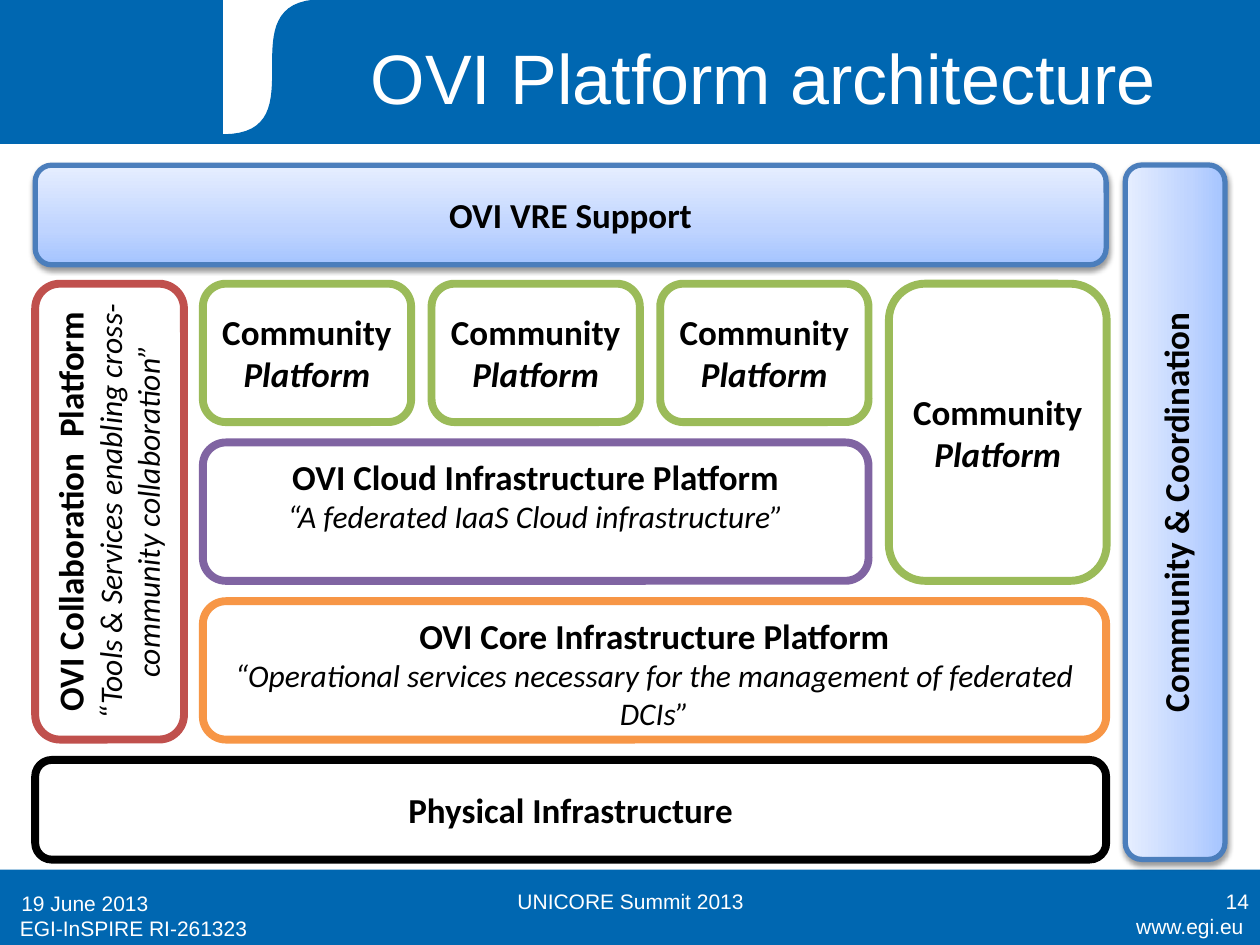
from pptx import Presentation
from pptx.dml.color import RGBColor
from pptx.enum.shapes import MSO_SHAPE as Shape
from pptx.enum.text import MSO_ANCHOR as Anchor, PP_ALIGN as Align
from pptx.oxml import parse_xml
from pptx.oxml.ns import nsdecls
from pptx.util import Cm, Pt

COLORS = {
    "blue": "0067B1", "white": "FFFFFF", "black": "000000",
    "orange": "F79646", "purple": "8064A2", "red": "C0504D",
    "green": "9BBB59", "steel": "4B7EBC",
    "deep": "A4C4FF", "mid": "BFD4FF", "pale": "E6EEFF",
}
PAGE_WIDTH, PAGE_HEIGHT = 25.4, 19.05
LEFT, FULL_WIDTH, BAR_HEIGHT = 0.71, 21.59, 2.01
GRID_LEFT, GRID_TOP = 4.09, 5.72
COL_STEP, ROW_STEP, GAP = 4.61, 3.2, 0.41
COMMUNITY = [("Community", 20, True, False), ("Platform", 20, True, True)]


def color(name):
    return RGBColor.from_string(COLORS[name])


def heading(text):
    return (text, 20, True, False)


def quote(text):
    return (text, 18, False, True)


def grid_area(col, row, cols, rows):
    return (GRID_LEFT + col * COL_STEP, GRID_TOP + row * ROW_STEP,
            cols * COL_STEP - GAP, rows * ROW_STEP - GAP)


def paint(shape, fill, line, width):
    shape.shadow.inherit = False
    shape.fill.solid()
    shape.fill.fore_color.rgb = color(fill)
    shape.line.color.rgb = color(line)
    shape.line.width = Pt(width)


def add_block(page, area, fill, line, width=0.75, kind=Shape.RECTANGLE):
    block = page.shapes.add_shape(kind, *map(Cm, area))
    paint(block, fill, line, width)
    return block


def add_curve(page, left, right, bottom, bend):
    points = []
    for step in range(1, 33):
        t = step / 32
        x = (left * ((1 - t) ** 3 + 3 * t ** 2 * (1 - t))
             + bend * (3 * t * (1 - t) ** 2 + t ** 3))
        y = bottom * ((1 - t) ** 3 + 3 * t * (1 - t) ** 2)
        points.append((Cm(x), Cm(y)))
    builder = page.shapes.build_freeform(Cm(right), 0)
    builder.add_line_segments(
        [(Cm(right), Cm(bottom)), (Cm(left), Cm(bottom))] + points)
    paint(builder.convert_to_shape(), "blue", "blue", 0.75)


def add_label(page, area, text, size=12, align=Align.LEFT, anchor=Anchor.MIDDLE):
    box = page.shapes.add_textbox(*map(Cm, area))
    frame = box.text_frame
    frame.word_wrap = True
    frame.vertical_anchor = anchor
    para = frame.paragraphs[0]
    para.text = text
    para.alignment = align
    para.font.name = "Arial"
    para.font.size = Pt(size)
    para.font.color.rgb = color("white")


def add_platform(page, area, line, lines, anchor=Anchor.MIDDLE, width=4.5):
    platform = add_block(page, area, "white", line, width, Shape.ROUNDED_RECTANGLE)
    frame = platform.text_frame
    frame.word_wrap = True
    frame.vertical_anchor = anchor
    for index, (text, size, bold, italic) in enumerate(lines):
        para = frame.add_paragraph() if index else frame.paragraphs[0]
        para.text = text
        para.alignment = Align.CENTER
        para.font.name = "Calibri"
        para.font.size = Pt(size)
        para.font.bold = bold
        para.font.italic = italic
        para.font.color.rgb = color("black")
    return platform


def add_glossy_bar(page, area, text, rotation=0):
    bar = add_platform(page, area, "steel", [heading(text)], width=3)
    bar.rotation = rotation
    stops = "".join(
        f'<a:gs pos="{place * 1000}"><a:srgbClr val="{COLORS[name]}"/></a:gs>'
        for place, name in ((0, "deep"), (35, "mid"), (100, "pale")))
    gradient = parse_xml(
        f'<a:gradFill {nsdecls("a")} rotWithShape="1"><a:gsLst>{stops}</a:gsLst>'
        '<a:lin ang="16200000" scaled="0"/></a:gradFill>')
    shadow = parse_xml(
        f'<a:effectLst {nsdecls("a")}><a:outerShdw blurRad="{Pt(3.1)}" '
        f'dist="{Pt(1.6)}" dir="5400000" rotWithShape="0">'
        f'<a:srgbClr val="{COLORS["black"]}"><a:alpha val="38000"/></a:srgbClr>'
        '</a:outerShdw></a:effectLst>')
    props = bar._element.spPr
    props.replace(props.find("{*}solidFill"), gradient)
    props.replace(props.find("{*}effectLst"), shadow)


def add_frame(page):
    add_block(page, (0, 17.53, PAGE_WIDTH, 1.52), "blue", "blue").line.fill.background()
    add_block(page, (0, 0, PAGE_WIDTH, 2.9), "blue", "blue")
    add_block(page, (4.5, 0, 5, 2.72), "white", "white")
    add_curve(page, 4.5, 9.5, 2.72, 6.5)
    add_label(page, (5.89, 0.33, 19, 2.41), "OVI Platform architecture", 40, Align.CENTER)
    add_label(page, (21.31, 18.29, 4.01, 0.79), "www.egi.eu",
              align=Align.RIGHT, anchor=Anchor.TOP)
    add_label(page, (0.15, 18.34, 6.35, 0.79), "EGI-InSPIRE RI-261323", anchor=Anchor.TOP)
    add_label(page, (0.18, 17.7, 5.92, 1.02), "19 June 2013")
    add_label(page, (8.69, 17.65, 8.05, 1.02), "UNICORE Summit 2013", align=Align.CENTER)
    add_label(page, (19.51, 17.65, 5.92, 1.02), "14", align=Align.RIGHT)


def add_architecture(page):
    add_platform(page, (GRID_LEFT, GRID_TOP + 2 * ROW_STEP, 18.21, 2.79), "orange", [
        heading("OVI Core Infrastructure Platform"),
        quote("“Operational services necessary for the management of federated DCIs”"),
    ], Anchor.TOP)
    add_platform(page, grid_area(0, 1, 3, 1), "purple", [
        heading("OVI Cloud Infrastructure Platform"),
        quote("“A federated IaaS Cloud infrastructure”"),
    ], Anchor.TOP)
    collaboration = add_platform(page, (LEFT, GRID_TOP, 3, 3 * ROW_STEP - GAP), "red", [
        heading("OVI Collaboration  Platform"),
        quote("“Tools & Services enabling cross-community collaboration”"),
    ], Anchor.TOP)
    collaboration.text_frame._txBody.bodyPr.set("vert", "vert270")
    for col in range(3):
        add_platform(page, grid_area(col, 0, 1, 1), "green", COMMUNITY)
    add_platform(page, (GRID_LEFT + 3 * COL_STEP, GRID_TOP, 4.39, 2 * ROW_STEP - GAP),
                 "green", COMMUNITY)
    add_glossy_bar(page, (LEFT, 3.33, FULL_WIDTH, BAR_HEIGHT), "OVI VRE Support")
    add_glossy_bar(page, (16.69, 9.32, 14, BAR_HEIGHT), "Community & Coordination", 270)
    add_platform(page, (LEFT, GRID_TOP + 3 * ROW_STEP, FULL_WIDTH, BAR_HEIGHT), "black",
                 [heading("Physical Infrastructure")])


def main():
    deck = Presentation()
    deck.slide_width, deck.slide_height = Cm(PAGE_WIDTH), Cm(PAGE_HEIGHT)
    page = deck.slides.add_slide(deck.slide_layouts[6])
    add_frame(page)
    add_architecture(page)
    deck.save("out.pptx")


if __name__ == "__main__":
    main()
